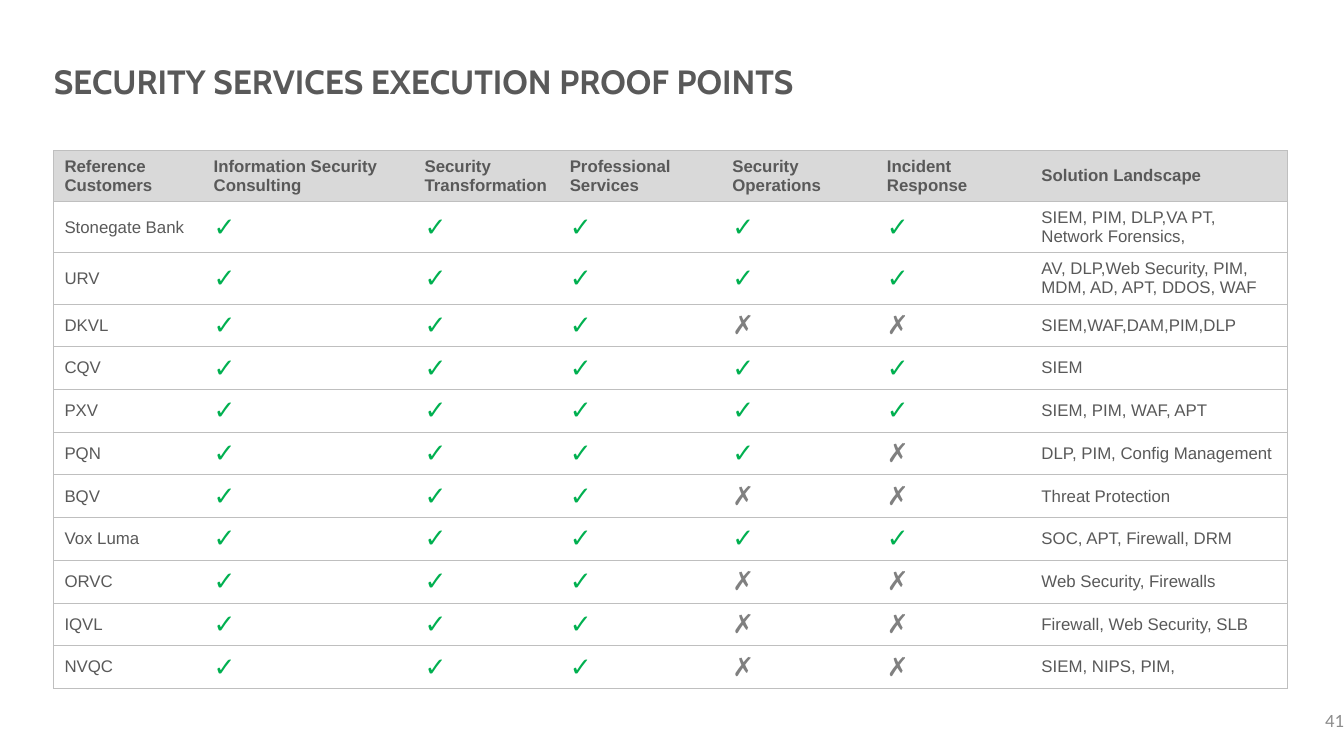
from lxml import etree
from pptx import Presentation
from pptx.dml.color import RGBColor
from pptx.enum.text import MSO_ANCHOR, MSO_AUTO_SIZE, PP_ALIGN
from pptx.oxml.ns import qn
from pptx.util import Inches, Pt

MIDDLE = MSO_ANCHOR.MIDDLE
LEFT, RIGHT = PP_ALIGN.LEFT, PP_ALIGN.RIGHT
NO_FIT = MSO_AUTO_SIZE.NONE
TITLE_ONLY = 5

COLORS = {
    "text": "595959",
    "number": "8C8C8C",
    "header": "D9D9D9",
    "border": "BFBFBF",
    "✓": "00B050",
    "✗": "808080",
}

COL_WIDTHS = [1.11, 1.57, 1.08, 1.21, 1.15, 1.15, 1.91]
TALL_ROW = 0.38
TALL_ROWS = 3

HEADERS = [
    "Reference\nCustomers",
    "Information Security Consulting",
    "Security Transformation",
    "Professional Services",
    "Security Operations",
    "Incident Response",
    "Solution Landscape",
]

CUSTOMERS = [
    ("Stonegate Bank", "✓✓✓✓✓", "SIEM, PIM, DLP,VA PT, Network Forensics,"),
    ("URV", "✓✓✓✓✓", "AV, DLP,Web Security, PIM, MDM, AD, APT, DDOS, WAF"),
    ("DKVL", "✓✓✓✗✗", "SIEM,WAF,DAM,PIM,DLP"),
    ("CQV", "✓✓✓✓✓", "SIEM"),
    ("PXV", "✓✓✓✓✓", "SIEM, PIM, WAF, APT"),
    ("PQN", "✓✓✓✓✗", "DLP, PIM, Config Management"),
    ("BQV", "✓✓✓✗✗", "Threat Protection"),
    ("Vox Luma", "✓✓✓✓✓", "SOC, APT, Firewall, DRM"),
    ("ORVC", "✓✓✓✗✗", "Web Security, Firewalls"),
    ("IQVL", "✓✓✓✗✗", "Firewall, Web Security, SLB"),
    ("NVQC", "✓✓✓✗✗", "SIEM, NIPS, PIM,"),
]


def write_text(tf, text, size=9, font="Arial", color="text", bold=False, align=LEFT):
    """Fill a text frame with one formatted paragraph per line of text."""
    tf.word_wrap = True
    for i, line in enumerate(text.split("\n")):
        p = tf.add_paragraph() if i else tf.paragraphs[0]
        p.alignment = align
        r = p.add_run()
        r.text = line
        r.font.size = Pt(size)
        r.font.name = font
        r.font.bold = bold
        r.font.color.rgb = RGBColor.from_string(COLORS[color])


def set_borders(cell, sides):
    """Draw thin lines on the given sides of a cell and clear the others."""
    tc_pr = cell._tc.get_or_add_tcPr()
    for side in "LRTB":
        ln = etree.SubElement(tc_pr, qn(f"a:ln{side}"), w=str(Pt(0.5)))
        if side in sides:
            fill = etree.SubElement(ln, qn("a:solidFill"))
            etree.SubElement(fill, qn("a:srgbClr"), val=COLORS["border"])
        else:
            etree.SubElement(ln, qn("a:noFill"))


def add_title(s, text, x, y, w, h):
    """Place the slide title in the given box."""
    sp = s.shapes.title
    sp.left, sp.top, sp.width, sp.height = map(Inches, (x, y, w, h))
    tf = sp.text_frame
    tf.margin_left = 0
    tf.vertical_anchor = MIDDLE
    tf.auto_size = NO_FIT
    write_text(tf, text, size=18, font="Cabin", bold=True)


def add_page_number(s, text, x, y, w, h):
    """Place the page number at the right of the given box."""
    tf = s.shapes.add_textbox(*map(Inches, (x, y, w, h))).text_frame
    tf.margin_right = 0
    tf.vertical_anchor = MIDDLE
    write_text(tf, text, size=10, font="Calibri", color="number", align=RIGHT)


def format_cell(cell, text, is_header, sides):
    """Write one table cell as a header, a mark or plain text."""
    cell.margin_left = cell.margin_right = Inches(0.08)
    cell.margin_top = cell.margin_bottom = Inches(0.04)
    cell.vertical_anchor = MIDDLE
    set_borders(cell, sides)
    if is_header:
        cell.fill.solid()
        cell.fill.fore_color.rgb = RGBColor.from_string(COLORS["header"])
    else:
        cell.fill.background()
    if text in COLORS:
        write_text(cell.text_frame, text, size=14, color=text)
    else:
        write_text(cell.text_frame, text, bold=is_header)


def add_customer_table(s, x, y, h):
    """Build the table of customers and services from its corner and height."""
    rows = [HEADERS] + [[name, *marks, tools] for name, marks, tools in CUSTOMERS]
    low_row = (h - TALL_ROWS * TALL_ROW) / (len(rows) - TALL_ROWS)
    box = map(Inches, (x, y, sum(COL_WIDTHS), h))
    table = s.shapes.add_table(len(rows), len(COL_WIDTHS), *box).table
    table.first_row = table.horz_banding = False
    for column, width in zip(table.columns, COL_WIDTHS):
        column.width = Inches(width)
    last = len(COL_WIDTHS) - 1
    for i, texts in enumerate(rows):
        table.rows[i].height = Inches(TALL_ROW if i < TALL_ROWS else low_row)
        for j, text in enumerate(texts):
            sides = "TB" + {0: "L", last: "R"}.get(j, "")
            format_cell(table.cell(i, j), text, i == 0, sides)


def main():
    """Build the slide and save it."""
    prs = Presentation()
    prs.slide_width = Inches(10)
    prs.slide_height = prs.slide_width * 9 // 16
    s = prs.slides.add_slide(prs.slide_layouts[TITLE_ONLY])
    add_title(s, "SECURITY SERVICES EXECUTION PROOF POINTS", 0.4, 0.4, 8.24, 0.4)
    add_page_number(s, "41", 7.75, 5.21, 2.25, 0.3)
    add_customer_table(s, 0.4, 1.12, 4)
    prs.save("out.pptx")


if __name__ == "__main__":
    main()
